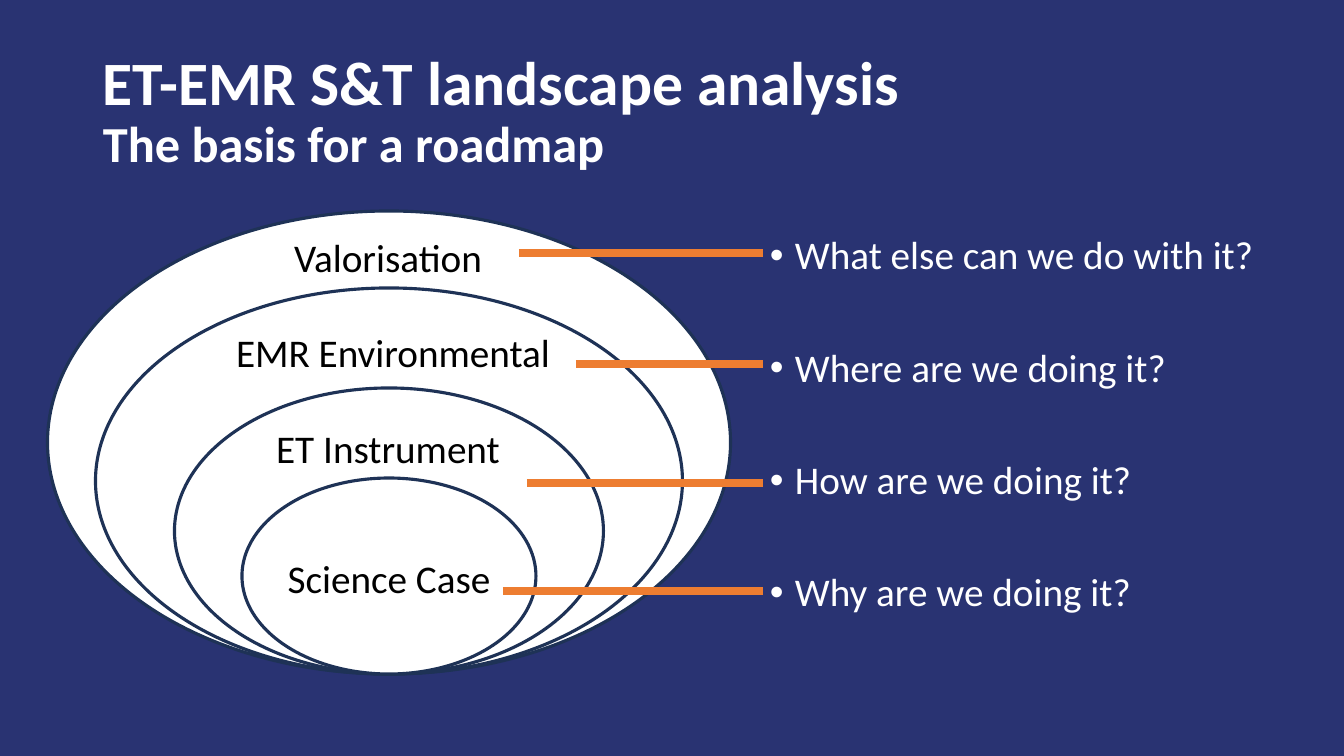
from lxml import etree
from pptx import Presentation, util as u
from pptx.dml.color import RGBColor
from pptx.enum import shapes, text
from pptx.oxml.ns import qn

PX = 12192000 / 1344
NAVY = RGBColor(0x29, 0x33, 0x72)
OUTLINE = RGBColor(0x1E, 0x32, 0x56)
ORANGE = RGBColor(0xED, 0x7D, 0x31)
WHITE = RGBColor(0xFF, 0xFF, 0xFF)
BLACK = RGBColor(0, 0, 0)


def px(length):
    return u.Emu(round(length * PX))


def add_text(page, area, lines, *, sizes=(28,), color=WHITE, bold=False, align=text.PP_ALIGN.LEFT,
             anchor=text.MSO_ANCHOR.TOP, margins=(10, 5), spacing=0.9, gap=0, bullet_indent=0):
    """Add a text box with one paragraph per line; sizes repeat over the lines."""
    box = page.shapes.add_textbox(*map(px, area))
    frame = box.text_frame
    frame.word_wrap = True
    frame.vertical_anchor = anchor
    frame.margin_left = frame.margin_right = px(margins[0])
    frame.margin_top = frame.margin_bottom = px(margins[1])
    for index, line in enumerate(lines):
        para = frame.add_paragraph() if index else frame.paragraphs[0]
        para.alignment = align
        para.line_spacing = spacing
        if index and gap:
            para.space_before = u.Pt(gap)
        if bullet_indent:
            properties = para._p.get_or_add_pPr()
            properties.set("marL", str(px(bullet_indent)))
            properties.set("indent", str(-px(bullet_indent)))
            etree.SubElement(properties, qn("a:buFont")).set("typeface", "Arial")
            etree.SubElement(properties, qn("a:buChar")).set("char", "•")
        span = para.add_run()
        span.text = line
        span.font.name = "Calibri"
        span.font.size = u.Pt(sizes[index % len(sizes)])
        span.font.bold = bold
        span.font.color.rgb = color


deck = Presentation()
deck.slide_width, deck.slide_height = px(1344), px(756)
page = deck.slides.add_slide(deck.slide_layouts[6])
page.background.fill.solid()
page.background.fill.fore_color.rgb = NAVY

add_text(page, (93, 40, 1159, 146), ["ET-EMR S&T landscape analysis", "The basis for a roadmap"],
         sizes=(44, 36), bold=True, anchor=text.MSO_ANCHOR.MIDDLE)

questions = ["What else can we do with it?", "Where are we doing it?",
             "How are we doing it?", "Why are we doing it?"]
add_text(page, (760, 231, 559, 480), questions, gap=50, bullet_indent=25)

# Nested ellipses share a centre line and touch at the bottom
CENTER, BOTTOM = 389, 674
layers = [  # label, width, height, label centre, label top
    ("Valorisation", 683, 463, 388, 233),
    ("EMR Environmental", 587, 386, 393, 328),
    ("ET Instrument", 429, 286, 388, 424),
    ("Science Case", 294, 196, 389, 554),
]
for label, width, height, label_center, label_top in layers:
    ellipse = page.shapes.add_shape(shapes.MSO_SHAPE.OVAL, px(CENTER - width / 2), px(BOTTOM - height),
                                    px(width), px(height))
    ellipse.shadow.inherit = False
    ellipse.fill.solid()
    ellipse.fill.fore_color.rgb = WHITE
    ellipse.line.color.rgb = OUTLINE
    ellipse.line.width = u.Pt(2.25)
    add_text(page, (label_center - 180, label_top, 360, 48), [label], color=BLACK,
             align=text.PP_ALIGN.CENTER, margins=(0, 0), spacing=1.0)

LINE_END = 763
for start, y in [(519, 253), (576, 364), (527, 483), (503, 591)]:
    link = page.shapes.add_connector(shapes.MSO_CONNECTOR.STRAIGHT, px(start), px(y), px(LINE_END), px(y))
    link.line.color.rgb = ORANGE
    link.line.width = u.Pt(6)
    etree.SubElement(link._element.spPr, qn("a:effectLst"))

deck.save("out.pptx")
